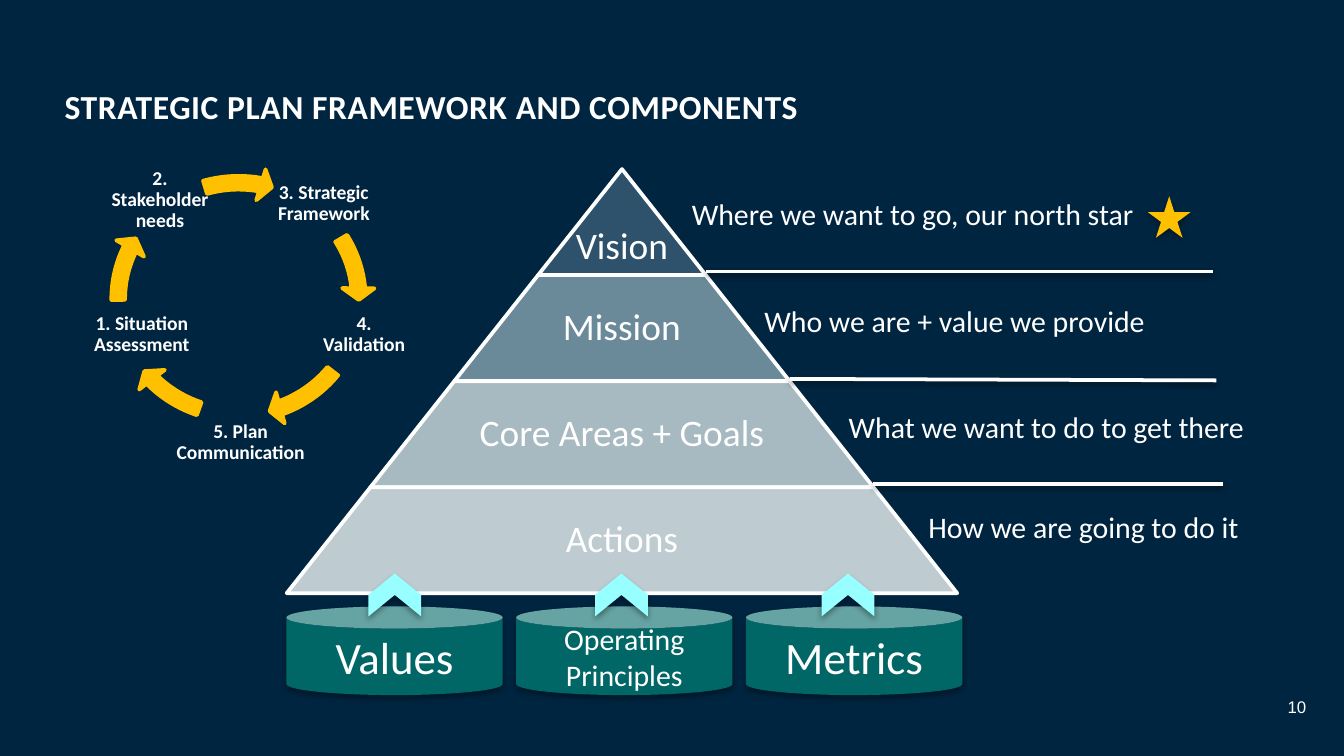
"""Build the strategic plan framework slide: cycle, pyramid and foundations."""
from lxml.etree import SubElement
from pptx import Presentation
from pptx.dml.color import RGBColor
from pptx.enum.shapes import MSO_CONNECTOR, MSO_SHAPE as Shape
from pptx.enum.text import MSO_ANCHOR as Anchor, MSO_AUTO_SIZE, PP_ALIGN as Align
from pptx.oxml.ns import qn
from pptx.util import Pt

TITLE = "STRATEGIC PLAN FRAMEWORK AND COMPONENTS"
PAGE_NUMBER = "10"
TIERS = [
    ("Vision", "2E526B"),
    ("Mission", "6A8999"),
    ("Core Areas + Goals", "A7B9C1"),
    ("Actions", "BECBD0"),
]
MEANINGS = [
    ("Where we want to go, our north star", (363.6, 101.5, 268.6, 26.6)),
    ("Who we are + value we provide", (402.5, 158.6, 268.6, 26.6)),
    ("What we want to do to get there", (447.6, 215.3, 247.7, 26.6)),
    ("How we are going to do it", (490.3, 269.2, 187.2, 26.6)),
]
RULES = [(145.4, 145.4, 649.6), (203, 203.8, 651.6), (259.2, 259.2, 655.2)]
CYCLE = [
    ("3. Strategic Framework", (147.6, 90, 51.8, 38), (212.94, 197.66)),
    ("4. Validation", (169.9, 160.6, 50.4, 37.4), (41.37, 22.47)),
    ("5. Plan Communication", (93.6, 218.2, 70.6, 37.4), (82.17, 65.81)),
    ("1. Situation Assessment", (46.8, 160.6, 58.3, 37.4), (122.98, 107.71)),
    ("2. Stakeholder needs", (56.2, 88.6, 59, 37.4), (168.66, 151.98)),
]
RING = (54.7, 89.3, 146.2, 141.8)
FOUNDATIONS = [("Values", 24), ("Operating Principles", 16), ("Metrics", 24)]
APEX_X, APEX_Y, TIER_HEIGHT, TIER_SPREAD = 333.2, 90.6, 56.8, 44.9

THEME = {
    "font": "Calibri", "number_font": "Arial",
    "back": "002540", "ink": "FFFFFF", "accent": "FFC000",
    "can": "006666", "chevron": "97FFFF", "shadow": "000000",
    "title": 18, "tier": 20, "meaning": 16, "step": 10.5, "number": 9,
    "stroke": 2,
}


def color(name):
    return RGBColor.from_string(THEME.get(name, name))


def write(shape, text, size, font=THEME["font"], bold=False, align=Align.LEFT,
          anchor=Anchor.TOP, insets=(7.2, 3.6, 7.2, 3.6), spacing=1.0, tracking=None):
    frame = shape.text_frame
    frame.auto_size = MSO_AUTO_SIZE.NONE
    frame.word_wrap = True
    frame.vertical_anchor = anchor
    frame.margin_left, frame.margin_top, frame.margin_right, frame.margin_bottom = map(Pt, insets)
    para = frame.paragraphs[0]
    para.alignment, para.line_spacing = align, spacing
    span = para.add_run()
    span.text = text
    span.font.size, span.font.name, span.font.bold = Pt(size), font, bold
    span.font.color.rgb = color("ink")
    if tracking:
        span.font._element.set("spc", str(tracking))


def add_text(slide, box, text, size, **style):
    write(slide.shapes.add_textbox(*map(Pt, box)), text, size, **style)


def cast_shadow(effects, opacity=35, distance=1.8):
    outer = SubElement(effects, qn("a:outerShdw"), blurRad=str(Pt(3.1)), dist=str(Pt(distance)),
                       dir="5400000", rotWithShape="0")
    tint = SubElement(outer, qn("a:srgbClr"), val=THEME["shadow"])
    SubElement(tint, qn("a:alpha"), val=str(opacity * 1000))


def add_figure(slide, kind, box, fill, outline=None, adjust=(), shadow=False, turn=0):
    figure = slide.shapes.add_shape(kind, *map(Pt, box))
    figure.rotation = turn
    for index, value in enumerate(adjust):
        figure.adjustments[index] = value
    figure.fill.solid()
    figure.fill.fore_color.rgb = color(fill)
    if outline:
        figure.line.color.rgb = color(outline)
        figure.line.width = Pt(THEME["stroke"])
    else:
        figure.line.fill.background()
    figure.shadow.inherit = False
    if shadow:
        cast_shadow(figure._element.spPr.find(qn("a:effectLst")))
    return figure


def add_rule(slide, *ends):
    rule = slide.shapes.add_connector(MSO_CONNECTOR.STRAIGHT, *map(Pt, ends))
    rule.line.color.rgb = color("ink")
    rule.line.width = Pt(THEME["stroke"])
    cast_shadow(SubElement(rule._element.spPr, qn("a:effectLst")), opacity=38, distance=1.6)


def add_pyramid(slide):
    for index, (label, fill) in enumerate(TIERS):
        top = APEX_Y + index * TIER_HEIGHT
        half = TIER_SPREAD * (index + 1)
        add_figure(slide, Shape.TRAPEZOID, (APEX_X - half, top, 2 * half, TIER_HEIGHT),
                   fill, outline="ink", adjust=[TIER_SPREAD / TIER_HEIGHT])
        reach = half * 0.65 if index else half
        add_text(slide, (APEX_X - reach, top, 2 * reach, TIER_HEIGHT), label, THEME["tier"],
                 align=Align.CENTER, anchor=Anchor.MIDDLE, spacing=0.9,
                 insets=(2, 2 if index else 28.8, 2, 2))


def add_cycle(slide):
    for label, box, (head, tail) in CYCLE:
        add_text(slide, box, label, THEME["step"], bold=True, align=Align.CENTER,
                 anchor=Anchor.MIDDLE, spacing=0.9, insets=(1, 1, 1, 1))
        add_figure(slide, Shape.CIRCULAR_ARROW, RING, "accent", outline="accent",
                   adjust=(0.052, 3.358, head, tail, 0.061))


def add_foundations(slide):
    for index, (label, size) in enumerate(FOUNDATIONS):
        can = add_figure(slide, Shape.CAN, (153.4 + 123.1 * index, 324.9, 115.9, 47.5),
                         "can", shadow=True)
        write(can, label, size, align=Align.CENTER, anchor=Anchor.MIDDLE)
    for index in range(len(FOUNDATIONS)):
        add_figure(slide, Shape.CHEVRON, (200 + 121.4 * index, 304.6, 23, 28.2),
                   "chevron", shadow=True, turn=270)


def main():
    deck = Presentation()
    deck.slide_width, deck.slide_height = Pt(720), Pt(405)
    slide = deck.slides.add_slide(deck.slide_layouts[5])
    slide.background.fill.solid()
    slide.background.fill.fore_color.rgb = color("back")
    title = slide.shapes.title
    title.left, title.top, title.width, title.height = map(Pt, (34.6, 32.4, 603.4, 49))
    write(title, TITLE, THEME["title"], bold=True, anchor=Anchor.MIDDLE,
          insets=(0, 0, 0, 0), spacing=Pt(21), tracking=30)
    add_text(slide, (676, 373, 23.8, 15), PAGE_NUMBER, THEME["number"],
             font=THEME["number_font"], align=Align.RIGHT, insets=(0, 0, 0, 0))
    add_pyramid(slide)
    add_cycle(slide)
    for text, box in MEANINGS:
        add_text(slide, box, text, THEME["meaning"])
    add_figure(slide, Shape.STAR_5_POINT, (614.9, 105.1, 23, 22.3), "accent", shadow=True)
    add_foundations(slide)
    for level, (start_y, end_y, end_x) in enumerate(RULES, 1):
        add_rule(slide, APEX_X + level * TIER_SPREAD, start_y, end_x, end_y)
    deck.save("out.pptx")


if __name__ == "__main__":
    main()
